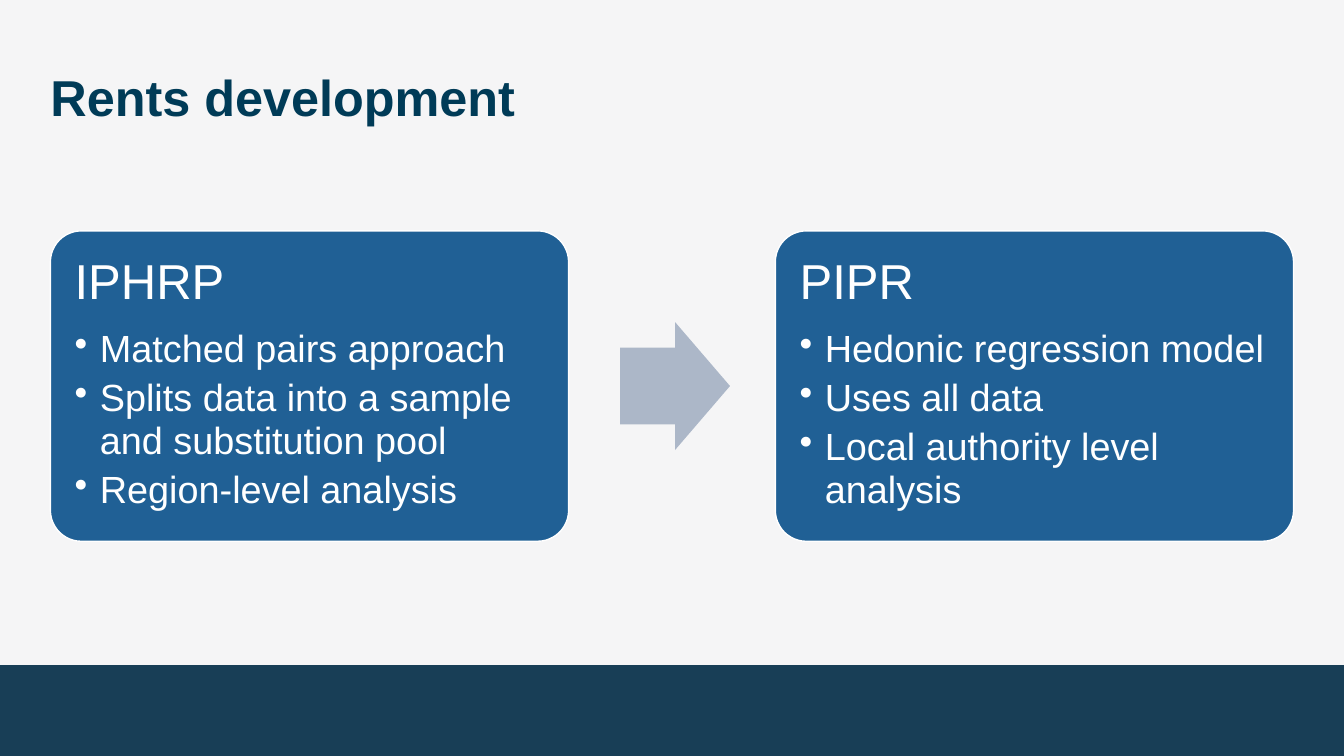
import pptx
import pptx.util
import pptx.dml.color
import pptx.enum.shapes
import pptx.enum.text
from lxml import etree
from dataclasses import dataclass

# Content
TITLE = "Rents development"
CARDS = [
    ("IPHRP", ["Matched pairs approach",
               "Splits data into a sample and substitution pool",
               "Region-level analysis"]),
    ("PIPR", ["Hedonic regression model",
              "Uses all data",
              "Local authority level analysis"]),
]


# Theme
@dataclass(frozen=True)
class Theme:
    font: str = "Arial"
    back: str = "F5F5F6"
    band: str = "183E56"
    title: str = "003B57"
    card: str = "206095"
    arrow: str = "ACB7C8"
    white: str = "FFFFFF"
    title_pt: int = 36
    head_pt: int = 35
    item_pt: int = 27


T = Theme()
KIND = pptx.enum.shapes.MSO_SHAPE
INCH = pptx.util.Inches
PT = pptx.util.Pt

# Layout in inches
WIDE, HIGH = 13.33, 7.5
EDGE = 0.5
BAND = HIGH * 0.12
CARD_W, CARD_H, CARD_Y = 5.14, 3.08, 2.29
STEP = WIDE - 2 * EDGE - CARD_W
PAD = 0.24
ARROW_X, ARROW_W, ARROW_H = 6.15, 1.09, 1.27
INDENT = 0.25


def color(code):
    return pptx.dml.color.RGBColor.from_string(code)


def add_block(slide, kind, box, fill, adjust=(), line=None):
    shape = slide.shapes.add_shape(kind, *map(INCH, box))
    shape.shadow.inherit = False
    shape.fill.solid()
    shape.fill.fore_color.rgb = color(fill)
    for i, value in enumerate(adjust):
        shape.adjustments[i] = value
    if line:
        shape.line.color.rgb = color(line)
        shape.line.width = PT(1)
    else:
        shape.line.fill.background()
    return shape


def set_frame(frame, pad):
    frame.word_wrap = True
    frame.vertical_anchor = pptx.enum.text.MSO_ANCHOR.TOP
    frame.margin_left = frame.margin_right = INCH(pad)
    frame.margin_top = frame.margin_bottom = INCH(pad)


def add_bullet(para):
    props = para._p.get_or_add_pPr()
    props.set("marL", str(INCH(INDENT)))
    props.set("indent", str(-INCH(INDENT)))
    mark = etree.SubElement(props, pptx.oxml.ns.qn("a:buChar"))
    mark.set("char", "•")


def style(para, size, ink, after, bold=False):
    para.alignment = pptx.enum.text.PP_ALIGN.LEFT
    para.line_spacing = 0.95
    para.space_after = PT(after)
    for run in para.runs:
        run.font.name = T.font
        run.font.size = PT(size)
        run.font.bold = bold
        run.font.color.rgb = color(ink)


def add_card(slide, left, head, items):
    card = add_block(slide, KIND.ROUNDED_RECTANGLE,
                     (left, CARD_Y, CARD_W, CARD_H),
                     T.card, [0.1], T.white)
    frame = card.text_frame
    # The rounded corners add their own inset to the text area
    set_frame(frame, PAD - 0.29 * 0.1 * CARD_H)
    para = frame.paragraphs[0]
    para.text = head
    style(para, T.head_pt, T.white, T.head_pt * 0.35)
    for item in items:
        para = frame.add_paragraph()
        para.text = item
        para.level = 1
        add_bullet(para)
        style(para, T.item_pt, T.white, round(T.item_pt * 0.15))


def main():
    deck = pptx.Presentation()
    deck.slide_width, deck.slide_height = INCH(WIDE), INCH(HIGH)
    slide = deck.slides.add_slide(deck.slide_layouts[6])
    slide.background.fill.solid()
    slide.background.fill.fore_color.rgb = color(T.back)

    # Footer band
    add_block(slide, KIND.RECTANGLE, (0, HIGH - BAND, WIDE, BAND), T.band)

    # Title
    box = slide.shapes.add_textbox(*map(INCH, (EDGE, 0.7, 11.5, 0.58)))
    set_frame(box.text_frame, 0)
    para = box.text_frame.paragraphs[0]
    para.text = TITLE
    style(para, T.title_pt, T.title, 10, True)

    # Cards and the arrow between them
    for i, (head, items) in enumerate(CARDS):
        add_card(slide, EDGE + i * STEP, head, items)
    top = CARD_Y + (CARD_H - ARROW_H) / 2
    add_block(slide, KIND.RIGHT_ARROW, (ARROW_X, top, ARROW_W, ARROW_H),
              T.arrow, [0.6, 0.5])

    deck.save("out.pptx")


if __name__ == "__main__":
    main()
